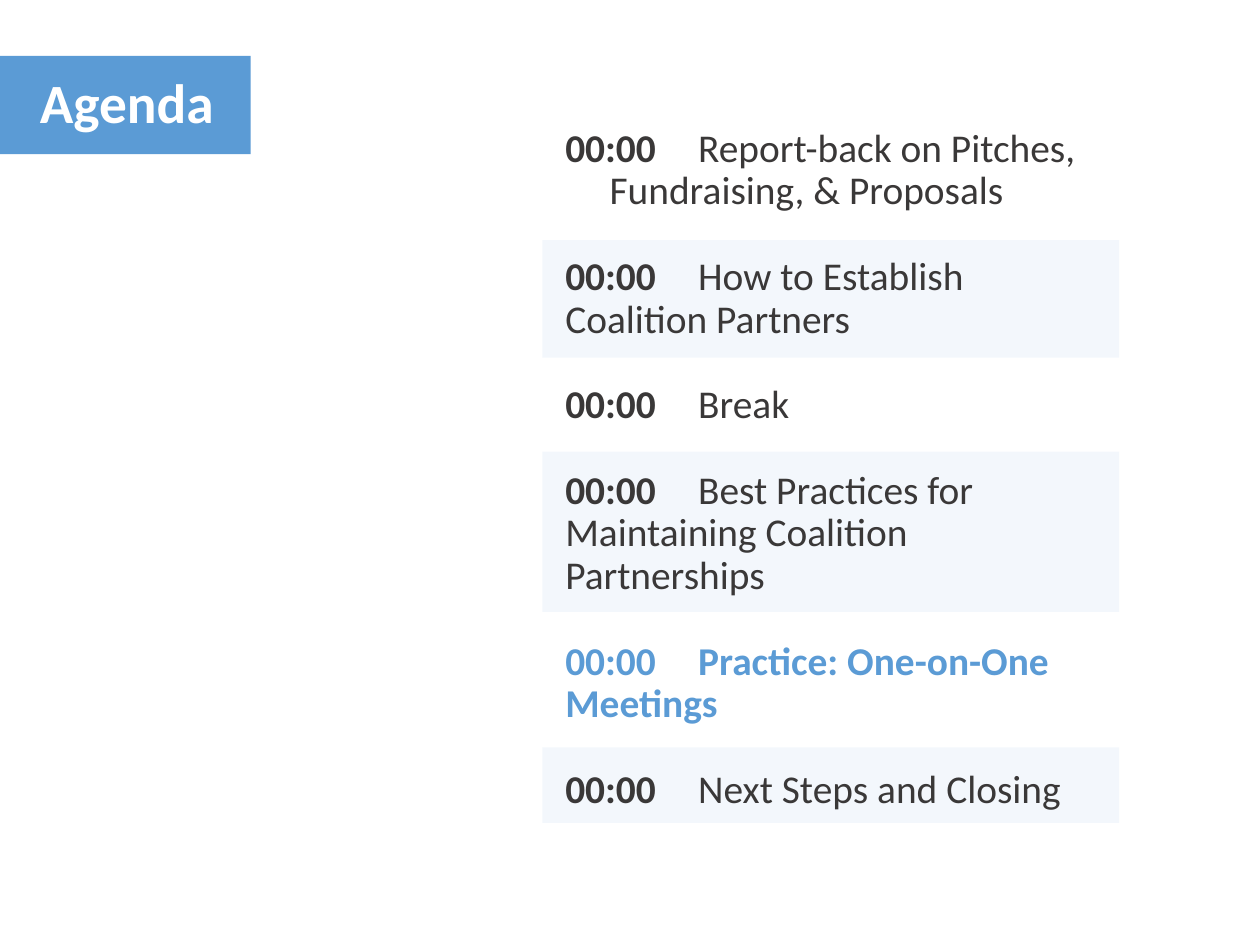
from lxml import etree
from pptx import Presentation
from pptx.dml.color import RGBColor
from pptx.enum.shapes import MSO_SHAPE
from pptx.enum.text import MSO_ANCHOR, MSO_AUTO_SIZE, PP_ALIGN
from pptx.oxml.ns import qn
from pptx.util import Inches, Pt

RECT = MSO_SHAPE.RECTANGLE
LEFT = PP_ALIGN.LEFT
TOP, MIDDLE = MSO_ANCHOR.TOP, MSO_ANCHOR.MIDDLE
FIXED = MSO_AUTO_SIZE.NONE

WIDTH, HEIGHT = Inches(14.22), Inches(10.67)
COLUMN, ROW = WIDTH / 100, HEIGHT / 100
TAB = Inches(1.42)
FONT = "Calibri"
COLORS = {"accent": "5B9BD5", "ink": "3A3838", "white": "FFFFFF"}

BAND_LEFT, BAND_WIDTH = 43.04, 45.78
BANDS = [(25.4, 12.46), (47.8, 16.96), (79.1, 7.97)]
TIME = "00:00"
AGENDA = [
    (TIME, "Report-back on Pitches,"),
    ("", "Fundraising, & Proposals"),
    (TIME, "How to Establish \tCoalition Partners"),
    (TIME, "Break"),
    (TIME, "Best Practices for \tMaintaining Coalition \tPartnerships"),
    (TIME, "Practice: One-on-One \tMeetings"),
    (TIME, "Next Steps and Closing"),
]
CURRENT = 5


def grid_box(left, top, width, height):
    return (round(left * COLUMN), round(top * ROW),
            round(width * COLUMN), round(height * ROW))


def add_text(p, text, size=32, color="ink", bold=False):
    r = p.add_run()
    r.text = text
    r.font.name = FONT
    r.font.size = Pt(size)
    r.font.bold = bold
    r.font.color.rgb = RGBColor.from_string(COLORS[color])


def add_block(s, box, opacity=None):
    sp = s.shapes.add_shape(RECT, *grid_box(*box))
    sp.shadow.inherit = False
    sp.line.fill.background()
    sp.fill.solid()
    sp.fill.fore_color.rgb = RGBColor.from_string(COLORS["accent"])
    if opacity is not None:
        color = sp.element.spPr.find(qn("a:solidFill"))[0]
        etree.SubElement(color, qn("a:alpha"), val=str(opacity * 1000))


def place_text(sp, box, anchor, wrap):
    sp.left, sp.top, sp.width, sp.height = grid_box(*box)
    sp.element.getparent().append(sp.element)
    tf = sp.text_frame
    tf.auto_size = FIXED
    tf.word_wrap = wrap
    tf.vertical_anchor = anchor
    return tf


def format_item(p, space_before):
    p.alignment = LEFT
    p.line_spacing = 0.9
    p.space_before = Pt(space_before)
    p.space_after = Pt(0)
    pPr = p._p.get_or_add_pPr()
    pPr.set("marL", "0")
    pPr.set("indent", "0")
    etree.SubElement(pPr, qn("a:buNone"))
    tabs = etree.SubElement(pPr, qn("a:tabLst"))
    for stop in range(1, 5):
        etree.SubElement(tabs, qn("a:tab"), pos=str(stop * TAB), algn="l")


def fill_title(sp):
    tf = place_text(sp, (2.46, 6.75, 19.76, 8.06), MIDDLE, False)
    p = tf.paragraphs[0]
    p.alignment = LEFT
    add_text(p, "Agenda", size=45, color="white", bold=True)


def fill_agenda(sp):
    tf = place_text(sp, (44.16, 13.12, 44.73, 73.66), TOP, True)
    for i, (time, topic) in enumerate(AGENDA):
        p = tf.add_paragraph() if i else tf.paragraphs[0]
        format_item(p, 35 if i and time else 0)
        color = "accent" if i == CURRENT else "ink"
        add_text(p, time + "\t", color=color, bold=True)
        add_text(p, topic, color=color, bold=i == CURRENT)


def main():
    prs = Presentation()
    prs.slide_width, prs.slide_height = WIDTH, HEIGHT
    s = prs.slides.add_slide(prs.slide_layouts[1])
    for top, height in BANDS:
        add_block(s, (BAND_LEFT, top, BAND_WIDTH, height), opacity=7)
    add_block(s, (0, 5.9, 19.9, 10.4))
    fill_agenda(s.placeholders[1])
    fill_title(s.shapes.title)
    prs.save("out.pptx")


if __name__ == "__main__":
    main()
